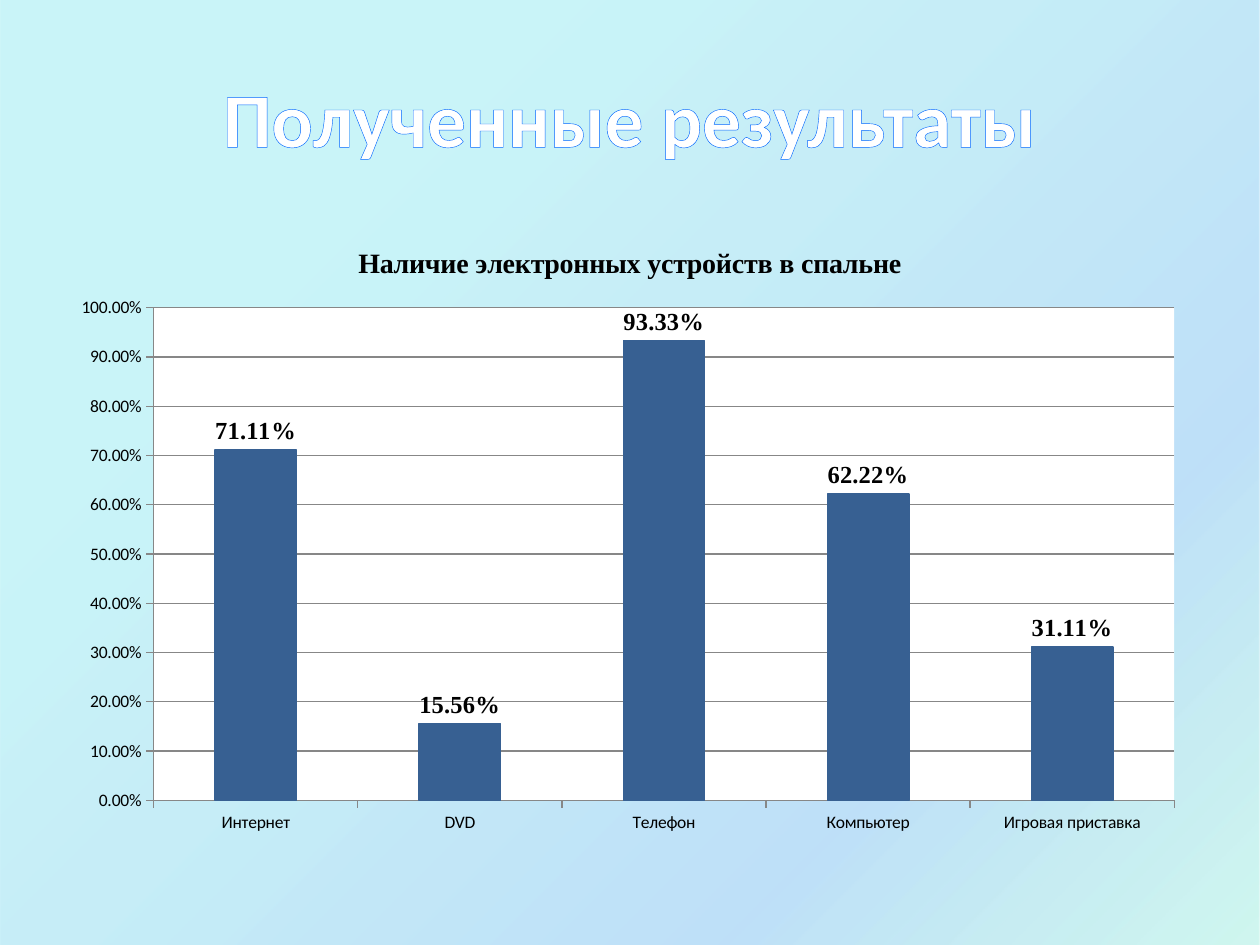
from lxml.etree import fromstring
from pptx import Presentation
from pptx.chart.data import CategoryChartData
from pptx.dml.color import RGBColor
from pptx.enum.chart import XL_CHART_TYPE, XL_LABEL_POSITION, XL_TICK_MARK
from pptx.enum.shapes import MSO_SHAPE
from pptx.enum.text import MSO_ANCHOR, PP_ALIGN
from pptx.oxml.ns import nsdecls, qn
from pptx.util import Pt

WHITE = RGBColor(0xFF, 0xFF, 0xFF)
BLACK = RGBColor(0x00, 0x00, 0x00)
BAR_BLUE = RGBColor(0x37, 0x60, 0x92)
OUTLINE_BLUE = RGBColor(0x00, 0x66, 0xFF)
AXIS_GREY = RGBColor(0x87, 0x87, 0x87)
# position %, colour, opacity %
BACKDROP_STOPS = [
    (25, RGBColor(0x21, 0xD6, 0xE0), 23),
    (75, RGBColor(0x00, 0x87, 0xE6), 25),
    (100, RGBColor(0x03, 0xD4, 0xA8), 18),
    (100, RGBColor(0x00, 0x5C, 0xBF), 26),
]
DEVICES = {
    "Интернет": 0.7111,
    "DVD": 0.1556,
    "Телефон": 0.9333,
    "Компьютер": 0.6222,
    "Игровая приставка": 0.3111,
}
PERCENT = "0.00%"


def set_font(font, color, **values):
    for name, value in values.items():
        setattr(font, name, value)
    font.color.rgb = color


def add_backdrop(page, box):
    backdrop = page.shapes.add_shape(MSO_SHAPE.RECTANGLE, *box)
    backdrop.shadow.inherit = False
    backdrop.line.fill.background()
    stops = "".join(
        f'<a:gs pos="{position * 1000}"><a:srgbClr val="{color}">'
        f'<a:alpha val="{opacity * 1000}"/></a:srgbClr></a:gs>'
        for position, color, opacity in BACKDROP_STOPS
    )
    gradient = fromstring(
        f'<a:gradFill {nsdecls("a")} rotWithShape="1"><a:gsLst>{stops}</a:gsLst>'
        '<a:lin ang="2700000" scaled="0"/></a:gradFill>'
    )
    backdrop._element.spPr.find(qn("a:prstGeom")).addnext(gradient)
    page.shapes._spTree.insert(2, backdrop._element)  # behind the title


def place_title(page, box, text):
    title = page.shapes.title
    title.left, title.top, title.width, title.height = box
    title.text_frame.vertical_anchor = MSO_ANCHOR.MIDDLE
    para = title.text_frame.paragraphs[0]
    para.alignment = PP_ALIGN.CENTER
    span = para.add_run()
    span.text = text
    set_font(span.font, WHITE, name="Calibri", size=Pt(44), bold=True)
    outline = fromstring(
        f'<a:ln {nsdecls("a")} w="{Pt(1.45)}"><a:solidFill>'
        f'<a:srgbClr val="{OUTLINE_BLUE}"/></a:solidFill></a:ln>'
    )
    span.font._element.insert(0, outline)


def style_plot_area(chart, **layout):
    """Set the inner plot box, in shares of the chart, and a white fill."""
    plot_area = chart._chartSpace.chart.plotArea
    for old in plot_area.findall(qn("c:layout")):
        plot_area.remove(old)
    shares = "".join(f'<c:{key} val="{value}"/>' for key, value in layout.items())
    plot_area.insert(0, fromstring(
        f'<c:layout {nsdecls("c")}><c:manualLayout><c:layoutTarget val="inner"/>'
        f'<c:xMode val="edge"/><c:yMode val="edge"/>{shares}'
        '</c:manualLayout></c:layout>'
    ))
    plot_area.append(fromstring(
        f'<c:spPr {nsdecls("c", "a")}><a:solidFill><a:srgbClr val="{WHITE}"/>'
        '</a:solidFill></c:spPr>'
    ))


def add_device_chart(page, box, heading):
    data = CategoryChartData(number_format=PERCENT)
    data.categories = list(DEVICES)
    data.add_series("Series 1", list(DEVICES.values()))
    chart = page.shapes.add_chart(XL_CHART_TYPE.COLUMN_CLUSTERED, *box, data).chart
    set_font(chart.font, BLACK, name="Calibri", size=Pt(10))
    chart.has_legend = False

    span = chart.chart_title.text_frame.paragraphs[0].add_run()
    span.text = heading
    set_font(span.font, BLACK, name="Times New Roman", size=Pt(16), bold=True)
    chart.chart_title.include_in_layout = False

    values = chart.value_axis
    for name, value in {"minimum_scale": 0, "maximum_scale": 1, "major_unit": 0.1,
                        "has_major_gridlines": True}.items():
        setattr(values, name, value)
    values.tick_labels.number_format = PERCENT
    values.tick_labels.number_format_is_linked = False
    for axis in (values, chart.category_axis):
        axis.major_tick_mark = XL_TICK_MARK.OUTSIDE
        axis.minor_tick_mark = XL_TICK_MARK.NONE
    for part in (values, chart.category_axis, values.major_gridlines):
        part.format.line.color.rgb = AXIS_GREY
        part.format.line.width = Pt(0.75)

    plot = chart.plots[0]
    plot.gap_width = 150
    plot.vary_by_categories = False
    bars = plot.series[0]
    bars.format.fill.solid()
    bars.format.fill.fore_color.rgb = BAR_BLUE
    bars.format.line.color.rgb = BAR_BLUE
    bars.format.line.width = Pt(0.75)
    labels = bars.data_labels
    for name, value in {"show_value": True, "number_format": PERCENT,
                        "number_format_is_linked": False,
                        "position": XL_LABEL_POSITION.OUTSIDE_END}.items():
        setattr(labels, name, value)
    set_font(labels.font, BLACK, name="Times New Roman", size=Pt(14), bold=True)
    style_plot_area(chart, x=0.08, y=0.14, w=0.9, h=0.79)


def main():
    deck = Presentation()
    deck.slide_width, deck.slide_height = Pt(720), Pt(540)
    page = deck.slides.add_slide(deck.slide_layouts[5])
    add_backdrop(page, (Pt(0), Pt(0), Pt(720), Pt(552)))
    place_title(page, (Pt(36), Pt(21.6), Pt(648), Pt(90)), "Полученные результаты")
    add_device_chart(page, (Pt(36), Pt(126), Pt(648), Pt(356.4)),
                     "Наличие электронных устройств в спальне")
    deck.save("out.pptx")


if __name__ == "__main__":
    main()
